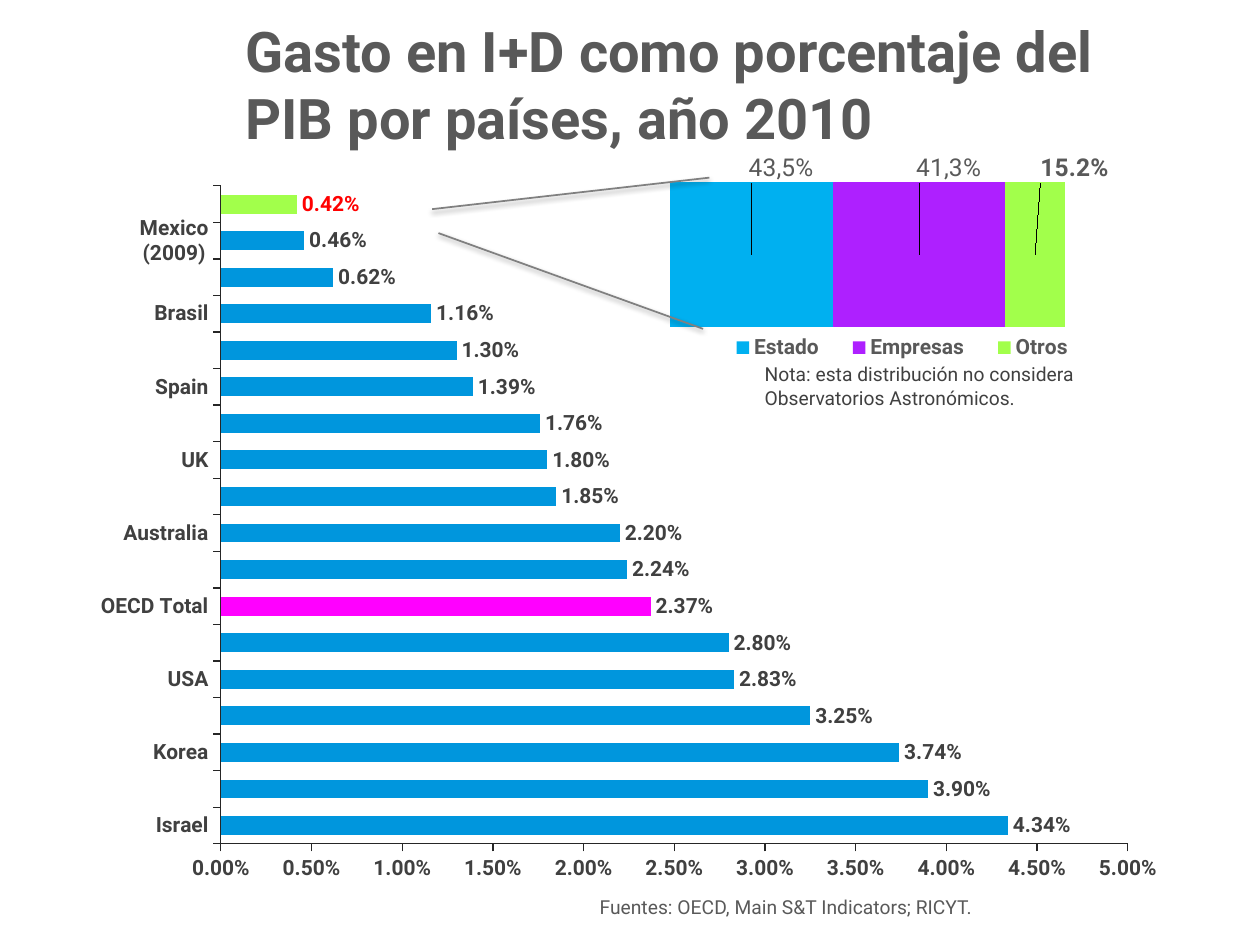
from lxml import etree
from pptx import Presentation
from pptx.chart.data import CategoryChartData
from pptx.dml.color import RGBColor
from pptx.enum.chart import XL_CHART_TYPE, XL_LABEL_POSITION, XL_LEGEND_POSITION, XL_TICK_MARK
from pptx.enum.shapes import MSO_CONNECTOR, MSO_SHAPE
from pptx.enum.text import MSO_ANCHOR, PP_ALIGN
from pptx.oxml import parse_xml
from pptx.oxml.ns import nsdecls, qn
from pptx.util import Inches, Pt

CLUSTERED, STACKED = XL_CHART_TYPE.BAR_CLUSTERED, XL_CHART_TYPE.BAR_STACKED
OUTSIDE_END = XL_LABEL_POSITION.OUTSIDE_END
LEGEND_TOP = XL_LEGEND_POSITION.TOP
TICK_OUT, TICK_NONE = XL_TICK_MARK.OUTSIDE, XL_TICK_MARK.NONE
STRAIGHT, RECT = MSO_CONNECTOR.STRAIGHT, MSO_SHAPE.RECTANGLE
LEFT, TOP, MIDDLE = PP_ALIGN.LEFT, MSO_ANCHOR.TOP, MSO_ANCHOR.MIDDLE

COLORS = {"gray": "595959", "dark": "404040", "axis": "262626", "line": "808080",
          "white": "FFFFFF", "blue": "0096DD", "pink": "FF00FF", "green": "A2FF4B",
          "red": "FF0000", "sky": "00B0F0", "purple": "AE20FF"}
COUNTRIES = {"Israel": 4.34, "Finland": 3.9, "Korea": 3.74, "Japan": 3.25, "USA": 2.83,
             "Germany": 2.8, "OECD Total": 2.37, "France": 2.24, "Australia": 2.2,
             "Canada": 1.85, "UK": 1.8, "China": 1.76, "Spain": 1.39, "NZ (2011)": 1.3,
             "Brasil": 1.16, "Argentina": 0.62, "Mexico (2009)": 0.46, "Chile": 0.42}
SECTORS = [("Estado", 0.413, "sky", "43,5%", 0.06), ("Empresas", 0.435, "purple", "41,3%", 0.06),
           ("Otros", 0.152, "green", None, 0.08)]


class Deck:
    """Style, grid of 100 columns by 75 rows, and current slide."""

    def __init__(self, font="Roboto"):
        self.prs = Presentation()
        self.prs.slide_width, self.prs.slide_height = Inches(10), Inches(7.5)
        self.col, self.row = self.prs.slide_width / 100, self.prs.slide_height / 75
        self.slide = self.prs.slides.add_slide(self.prs.slide_layouts[6])
        self.font = font

    def grid(self, x, y, w, h):
        return [round(n * u) for n, u in zip((x, y, w, h), (self.col, self.row) * 2)]

    def rgb(self, name):
        return RGBColor.from_string(COLORS[name])

    def style(self, font, size, color, bold=False):
        font.name, font.size, font.bold = self.font, Pt(size), bold
        font.color.rgb = self.rgb(color)

    def paint(self, fmt, color):
        fmt.fill.solid()
        fmt.fill.fore_color.rgb = self.rgb(color)

    def fill_text(self, sp, lines, size, color, bold, anchor):
        tf = sp.text_frame
        tf.word_wrap, tf.vertical_anchor = True, anchor
        for i, line in enumerate(lines):
            p = tf.add_paragraph() if i else tf.paragraphs[0]
            p.text, p.alignment = line, LEFT
            self.style(p.font, size, color, bold)

    def text(self, box, lines, size, color, bold=False, anchor=TOP):
        sp = self.slide.shapes.add_textbox(*self.grid(*box))
        self.fill_text(sp, lines, size, color, bold, anchor)

    def panel(self, box, lines, size, color):
        sp = self.slide.shapes.add_shape(RECT, *self.grid(*box))
        sp.shadow.inherit = False
        self.paint(sp, "white")
        sp.line.fill.background()
        self.fill_text(sp, lines, size, color, False, TOP)

    def line(self, *ends):
        cx = self.slide.shapes.add_connector(STRAIGHT, *self.grid(*ends))
        cx.line.color.rgb, cx.line.width = self.rgb("line"), Pt(1)
        cx._element.spPr.append(parse_xml(
            f'<a:effectLst {nsdecls("a")}><a:outerShdw blurRad="{Pt(3.1)}" dist="{Pt(1.6)}" '
            'dir="5400000" rotWithShape="0"><a:srgbClr val="000000"><a:alpha val="38000"/>'
            '</a:srgbClr></a:outerShdw></a:effectLst>'))

    def place(self, parent, index, **values):
        for old in parent.findall(qn("c:layout")):
            parent.remove(old)
        layout = etree.Element(qn("c:layout"))
        manual = etree.SubElement(layout, qn("c:manualLayout"))
        for tag, value in values.items():
            etree.SubElement(manual, qn(f"c:{tag}")).set("val", str(value))
        parent.insert(index, layout)

    def chart(self, kind, box, data, plot_box, gap, size, color):
        chart = self.slide.shapes.add_chart(kind, *self.grid(*box), data).chart
        chart.has_title = chart.has_legend = False
        self.style(chart.font, size, color, True)
        chart.value_axis.has_major_gridlines = False
        chart.value_axis.minimum_scale = 0
        plot = chart.plots[0]
        plot.gap_width, plot.vary_by_categories = gap, False
        area = chart._chartSpace.find(f".//{qn('c:plotArea')}")
        self.place(area, 0, layoutTarget="inner", xMode="edge", yMode="edge",
                   **dict(zip("xywh", plot_box)))
        return chart

    def country_chart(self, box):
        data = CategoryChartData(number_format="0.00%")
        data.categories = list(COUNTRIES)
        data.add_series("Series 1", [round(v / 100, 4) for v in COUNTRIES.values()])
        chart = self.chart(CLUSTERED, box, data, (0.11, 0.02, 0.84, 0.91), 93, 10, "dark")
        for axis in (chart.category_axis, chart.value_axis):
            axis.major_tick_mark, axis.minor_tick_mark = TICK_OUT, TICK_NONE
            self.style(axis.tick_labels.font, 12, "dark", True)
            axis.format.line.color.rgb, axis.format.line.width = self.rgb("axis"), Pt(0.75)
        skip = etree.Element(qn("c:tickLblSkip"))
        skip.set("val", "2")
        chart.category_axis._element.find(qn("c:noMultiLvlLbl")).addprevious(skip)
        chart.value_axis.maximum_scale, chart.value_axis.major_unit = 0.05, 0.005
        chart.value_axis.tick_labels.number_format = "0.00%"
        chart.value_axis.tick_labels.number_format_is_linked = False
        series = chart.plots[0].series[0]
        self.paint(series.format, "blue")
        labels = series.data_labels
        labels.show_value, labels.position = True, OUTSIDE_END
        labels.number_format, labels.number_format_is_linked = "0.00%", False
        self.style(labels.font, 12, "dark", True)
        names = list(COUNTRIES)
        for name, color in (("OECD Total", "pink"), ("Chile", "green")):
            self.paint(series.points[names.index(name)].format, color)
        label = series.points[names.index("Chile")].data_label
        self.style(label.font, 12, "red", True)
        label.position = OUTSIDE_END

    def sector_chart(self, box):
        data = CategoryChartData(number_format="0.0%")
        data.categories = ["1"]
        for name, value, *_ in SECTORS:
            data.add_series(name, [value])
        chart = self.chart(STACKED, box, data, (0.02, 0.16, 0.8, 0.82), 75, 12, "gray")
        chart.plots[0].overlap = 100
        chart.category_axis.visible = chart.value_axis.visible = False
        chart.value_axis.maximum_scale = 1
        chart.has_legend = True
        chart.legend.position, chart.legend.include_in_layout = LEGEND_TOP, False
        self.style(chart.legend.font, 12, "gray", True)
        self.place(chart.legend._element, 1, xMode="edge", yMode="edge", x=0.1, y=0.82, w=0.78, h=0.1)
        for series, (_, _, color, caption, shift) in zip(chart.plots[0].series, SECTORS):
            self.paint(series.format, color)
            series.data_labels.show_value = True
            self.style(series.data_labels.font, 14, "gray", True)
            label = series.points[0].data_label
            if caption:
                r = label.text_frame.paragraphs[0].add_run()
                r.text = caption
                self.style(r.font, 14, "gray")
            else:
                self.style(label.font, 14, "gray", True)
            self.place(series._element.find(f".//{qn('c:dLbl')}"), 1, x=shift, y=-0.28)


def main():
    deck = Deck()
    deck.text((18.5, 0.4, 77.2, 12.5), ["Gasto en I+D como porcentaje del PIB por países, año 2010"],
              32, "gray", True, MIDDLE)
    deck.country_chart((8, 13.6, 85.8, 57.4))
    deck.sector_chart((52.4, 6.2, 39.2, 24.6))
    deck.line(34.3, 16.6, 56.3, 14.1)
    deck.line(34.8, 18.5, 55.8, 26.1)
    deck.panel((46.6, 70.6, 34.1, 2.9), ["Fuentes: OECD, Main S&T Indicators; RICYT."], 11, "gray")
    deck.text((59.7, 28.3, 27.6, 4.7),
              ["Nota: esta distribución no considera", "Observatorios Astronómicos."], 11, "dark")
    deck.prs.save("out.pptx")


if __name__ == "__main__":
    main()
